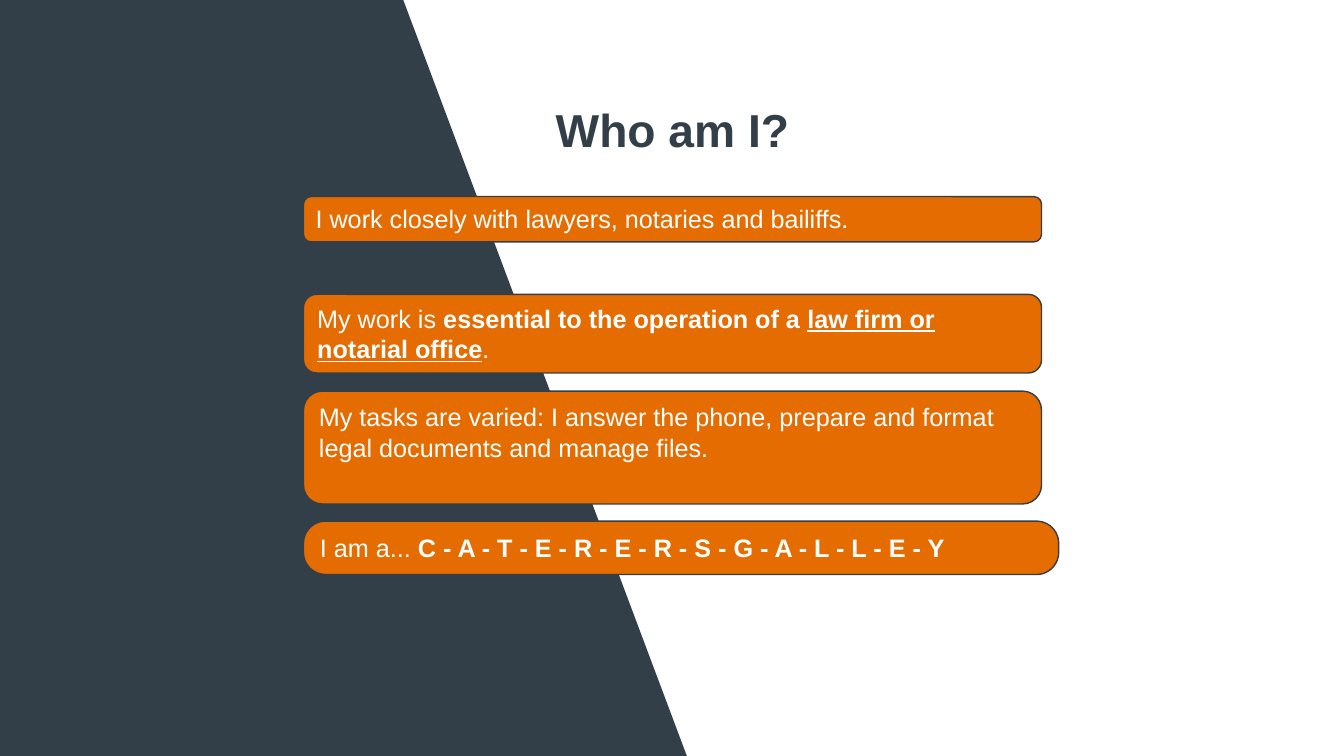
from pptx import Presentation
from pptx.dml.color import RGBColor
from pptx.enum.shapes import MSO_SHAPE as Shape
from pptx.enum.text import MSO_ANCHOR as Anchor, PP_ALIGN as Align
from pptx.util import Inches, Pt

SLATE = RGBColor(0x33, 0x3F, 0x48)
ORANGE = RGBColor(0xE4, 0x6C, 0x00)
WHITE = RGBColor(0xFF, 0xFF, 0xFF)
WIDTH, HEIGHT = 13.33, 7.5
CARD_LEFT, CARD_WIDTH = 3.01, 7.32
CORNER = 0.167
PLAIN, BOLD, UNDERLINED = (False, False), (True, False), (True, True)

CLUES = [
    (1.95, 0.45, CARD_WIDTH, CORNER,
     [("I work closely with lawyers, notaries and bailiffs.", PLAIN)]),
    (2.92, 0.78, CARD_WIDTH, CORNER,
     [("My work is ", PLAIN),
      ("essential to the operation of a ", BOLD),
      ("law firm or notarial office", UNDERLINED),
      (".", PLAIN)]),
    (3.88, 1.12, CARD_WIDTH, CORNER,
     [("My tasks are varied: I answer the phone, prepare and format "
       "legal documents and manage files.", PLAIN)]),
    (5.17, 0.53, 7.49, 0.415,
     [("I am a... ", PLAIN),
      ("C - A - T - E - R - E - R - S - G - A - L - L - E - Y", BOLD)]),
]


def style_font(font, size, color):
    """Set the typeface, size and colour of a font."""
    font.name = "Arial"
    font.size = Pt(size)
    font.color.rgb = color


def add_slanted_panel(page, top_width, bottom_width, height):
    """Draw the dark panel with a slanted right edge."""
    outline = page.shapes.build_freeform(0, 0, scale=Inches(1))
    outline.add_line_segments(
        [(top_width, 0), (bottom_width, height), (0, height)], close=True)
    panel = outline.convert_to_shape()
    panel.shadow.inherit = False
    panel.fill.solid()
    panel.fill.fore_color.rgb = SLATE
    panel.line.fill.background()


def add_title(page, left, top, width, height):
    """Place the centred question above the cards."""
    box = page.shapes.add_textbox(*map(Inches, (left, top, width, height)))
    box.text_frame.word_wrap = True
    para = box.text_frame.paragraphs[0]
    para.text = "Who am I?"
    para.alignment = Align.CENTER
    style_font(para.font, 33, SLATE)
    para.font.bold = True


def add_clue(page, left, top, width, height, corner, spans):
    """Draw one rounded card holding a clue."""
    card = page.shapes.add_shape(
        Shape.ROUNDED_RECTANGLE, *map(Inches, (left, top, width, height)))
    card.adjustments[0] = corner
    card.shadow.inherit = False
    card.fill.solid()
    card.fill.fore_color.rgb = ORANGE
    card.line.color.rgb = SLATE
    card.line.width = Pt(1)
    frame = card.text_frame
    frame.word_wrap = True
    frame.vertical_anchor = Anchor.TOP
    para = frame.paragraphs[0]
    para.alignment = Align.LEFT
    style_font(para.font, 18, WHITE)
    for text, (bold, underline) in spans:
        span = para.add_run()
        span.text = text
        span.font.bold = bold
        span.font.underline = underline


def main():
    """Build the riddle slide and save it."""
    deck = Presentation()
    deck.slide_width, deck.slide_height = Inches(WIDTH), Inches(HEIGHT)
    page = deck.slides.add_slide(deck.slide_layouts[6])
    add_slanted_panel(page, 4.17, 6.66, HEIGHT)
    for top, height, width, corner, spans in CLUES:
        add_clue(page, CARD_LEFT, top, width, height, corner, spans)
    add_title(page, 4.08, 0.96, 5.18, 0.66)
    deck.save("out.pptx")


if __name__ == "__main__":
    main()
